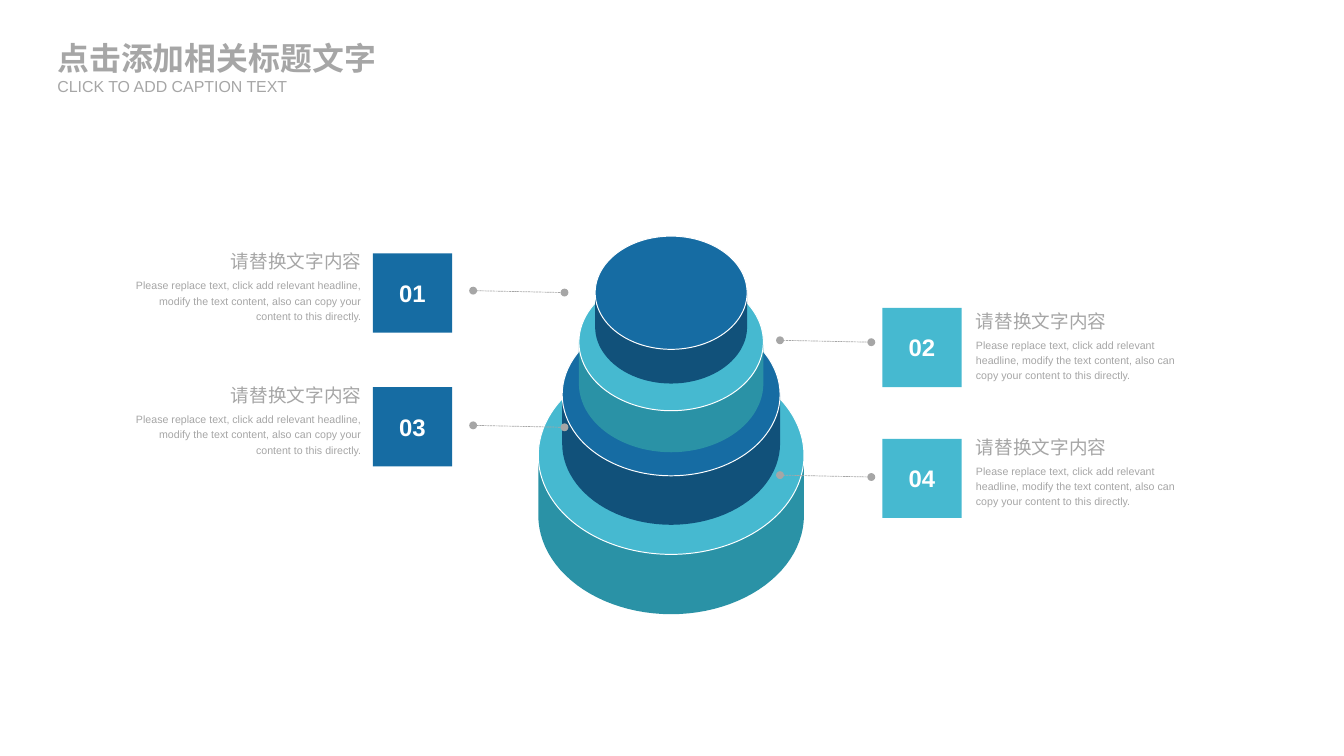
from dataclasses import dataclass
from math import cos, pi, sin

from lxml.etree import SubElement
from pptx import Presentation
from pptx.dml.color import RGBColor
from pptx.enum.dml import MSO_LINE
from pptx.enum.shapes import MSO_CONNECTOR, MSO_SHAPE
from pptx.enum.text import MSO_ANCHOR, MSO_AUTO_SIZE, PP_ALIGN
from pptx.oxml.ns import qn
from pptx.util import Inches, Pt

COLUMNS, ROWS = 160, 90


@dataclass(frozen=True)
class Theme:
    font: str = "Arial"
    grey: RGBColor = RGBColor(0xA6, 0xA6, 0xA6)
    white: RGBColor = RGBColor(0xFF, 0xFF, 0xFF)
    blue: RGBColor = RGBColor(0x16, 0x6C, 0xA3)
    dark_blue: RGBColor = RGBColor(0x11, 0x51, 0x7A)
    teal: RGBColor = RGBColor(0x46, 0xB9, 0xD0)
    dark_teal: RGBColor = RGBColor(0x2A, 0x92, 0xA6)
    title: Pt = Pt(24)
    number: Pt = Pt(18)
    headline: Pt = Pt(14)
    caption: Pt = Pt(12)
    detail: Pt = Pt(8)


def apply(target, formats):
    for name, value in formats.items():
        setattr(target, name, value)


class Board:
    """Draws on one slide; all lengths are grid columns and rows."""

    def __init__(self, deck, theme):
        self.theme = theme
        self.slide = deck.slides.add_slide(deck.slide_layouts[0])
        self.shapes = self.slide.shapes
        self.column = deck.slide_width / COLUMNS
        self.row = deck.slide_height / ROWS

    def place(self, x, y):
        return round(x * self.column), round(y * self.row)

    def box(self, x, y, width, height):
        return *self.place(x, y), *self.place(width, height)

    def set_text(self, shape, text, size, color=None, bold=False, align=PP_ALIGN.LEFT,
                 anchor=MSO_ANCHOR.TOP, leading=1.0):
        frame = shape.text_frame
        apply(frame, {
            "text": text, "word_wrap": True, "auto_size": MSO_AUTO_SIZE.NONE,
            "vertical_anchor": anchor, "margin_left": 0, "margin_right": 0,
            "margin_top": 0, "margin_bottom": 0,
        })
        paragraph = frame.paragraphs[0]
        apply(paragraph, {"alignment": align, "line_spacing": leading,
                          "space_before": Pt(0)})
        font = paragraph.runs[0].font
        apply(font, {"name": self.theme.font, "size": size, "bold": bold})
        font.color.rgb = color or self.theme.grey

    def heading(self, index, area, text, size, bold=False):
        holder = self.slide.placeholders[index]
        apply(holder, dict(zip(("left", "top", "width", "height"), self.box(*area))))
        self.set_text(holder, text, size, bold=bold)

    def text(self, area, text, size, **style):
        self.set_text(self.shapes.add_textbox(*self.box(*area)), text, size, **style)

    def paint(self, shape, fill, outline=None):
        shape.shadow.inherit = False
        shape.fill.solid()
        shape.fill.fore_color.rgb = fill
        if outline is None:
            shape.line.fill.background()
        else:
            shape.line.color.rgb = outline
            shape.line.width = Pt(0.75)

    def badge(self, x, y, size, number, fill):
        square = self.shapes.add_shape(MSO_SHAPE.RECTANGLE, *self.box(x, y, size, size))
        self.paint(square, fill)
        self.set_text(square, number, self.theme.number, self.theme.white, bold=True,
                      align=PP_ALIGN.CENTER, anchor=MSO_ANCHOR.MIDDLE)

    def tier(self, center, top, width, lid_color, wall_color, steps=48):
        """Draw a cylinder: a wall with a rounded foot, then its oval lid."""
        height, depth = 0.745 * width, 0.225 * width
        middle = top + height / 2
        foot = [self.place(center + width / 2 * cos(pi * step / steps),
                           middle + depth + height / 2 * sin(pi * step / steps))
                for step in range(steps + 1)]
        wall = self.shapes.build_freeform(*self.place(center + width / 2, middle))
        wall.add_line_segments([*foot, self.place(center - width / 2, middle)])
        self.paint(wall.convert_to_shape(), wall_color)
        lid = self.shapes.add_shape(
            MSO_SHAPE.OVAL, *self.box(center - width / 2, top, width, height))
        self.paint(lid, lid_color, self.theme.white)

    def leader(self, x, y, run=10.87, drop=0.23):
        leader = self.shapes.add_connector(
            MSO_CONNECTOR.STRAIGHT, *self.place(x, y), *self.place(x + run, y + drop))
        leader.line.color.rgb = self.theme.grey
        apply(leader.line, {"width": Pt(0.5), "dash_style": MSO_LINE.SQUARE_DOT})
        properties = leader._element.spPr
        outline = properties.find(qn("a:ln"))
        for end in ("a:headEnd", "a:tailEnd"):
            SubElement(outline, qn(end), type="oval")
        SubElement(properties, qn("a:effectLst"))


def main():
    deck = Presentation()
    deck.slide_width, deck.slide_height = Inches(14.06), Inches(7.91)
    theme = Theme()
    board = Board(deck, theme)

    board.heading(0, (6.83, 4.55, 40, 4.55), "点击添加相关标题文字", theme.title, True)
    board.heading(1, (6.83, 9.1, 33, 2.3), "CLICK TO ADD CAPTION TEXT", theme.caption)

    teal_pair = theme.teal, theme.dark_teal
    blue_pair = theme.blue, theme.dark_blue
    tiers = [(42.44, 31.63, teal_pair), (37.32, 25.94, blue_pair),
             (32.54, 21.96, teal_pair), (28.11, 18.09, blue_pair)]
    for top, width, colors in tiers:
        board.tier(79.9, top, width, *colors)

    headline = "请替换文字内容"
    detail = ("Please replace text, click add relevant headline, modify the text "
              "content, also can copy your content to this directly.")
    left = {"badge_x": 44.38, "text_x": 16.08, "text_width": 26.95, "leader_x": 56.33,
            "align": PP_ALIGN.RIGHT, "fill": theme.blue}
    right = {"badge_x": 105.03, "text_x": 116.18, "text_width": 26.5, "leader_x": 92.86,
             "align": PP_ALIGN.LEFT, "fill": theme.teal}
    # Side, then the rows of the badge, the headline and the leader
    items = [(left, 30.15, 29.81, 34.6), (right, 36.64, 36.87, 40.51),
             (left, 46.08, 45.74, 50.64), (right, 52.23, 51.89, 56.56)]
    for number, (side, badge_y, text_y, leader_y) in enumerate(items, start=1):
        x, width, align = side["text_x"], side["text_width"], side["align"]
        board.leader(side["leader_x"], leader_y)
        board.text((x, text_y, width, 3), headline, theme.headline, align=align)
        board.text((x, text_y + 3.13, width, 8.5), detail, theme.detail,
                   align=align, leading=1.2)
        board.badge(side["badge_x"], badge_y, 9.44, f"{number:02}", side["fill"])

    deck.save("out.pptx")


if __name__ == "__main__":
    main()
